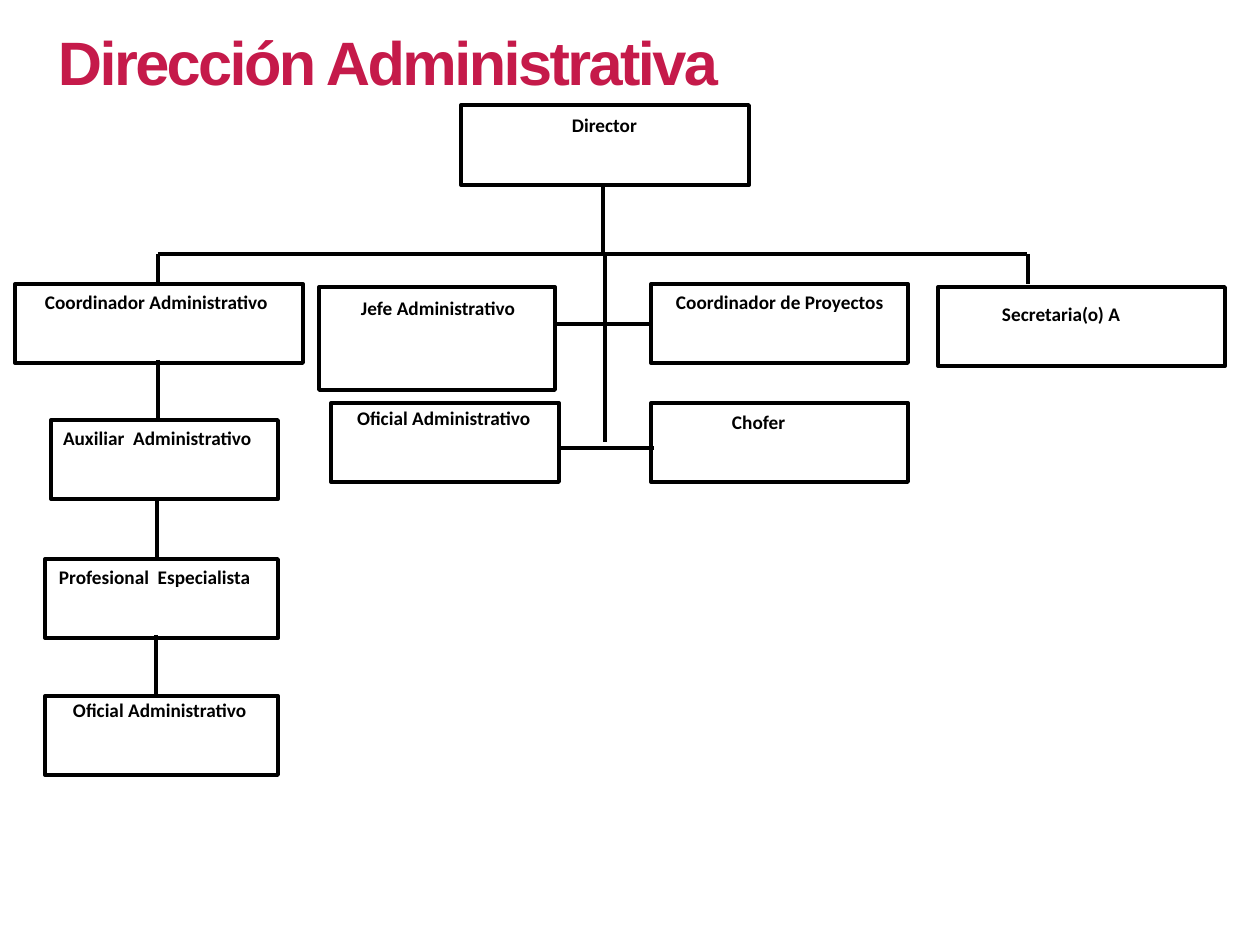
from pptx import Presentation
from pptx import util as u
from pptx.dml.color import RGBColor
from pptx.enum import shapes, text
from pptx.oxml.ns import qn
from lxml import etree

COLORS = {"title": "C51A4A", "ink": "000000"}
SCALE = 914400 / 126
LINE_WIDTH = u.Pt(2.25)

TITLE = ("Dirección Administrativa", (45, 18, 858, 87))
TITLE_FORMAT = {"name": "Arial", "size": u.Pt(35), "bold": True}
LABEL_FORMAT = {"name": "Calibri", "size": u.Pt(11), "bold": True}
INSET = 13

# Each post: name, box (left, top, width, height),
# label frame (left, top, width, height), left edge of the wording
POSTS = [
    ("Director", (461, 105, 288, 80), (478, 107, 175, 83), 572),
    ("Coordinador Administrativo", (15, 284, 288, 79), (33, 284, 251, 83), 45),
    ("Jefe Administrativo", (319, 287, 236, 103), (323, 290, 236, 83), 361),
    ("Coordinador de Proyectos", (651, 284, 257, 79), (664, 284, 234, 83), 676),
    ("Secretaria(o) A", (938, 287, 287, 79), (938, 296, 281, 59), 1002),
    ("Oficial Administrativo", (331, 403, 228, 79), (326, 400, 236, 83), 357),
    ("Chofer", (651, 403, 257, 79), (646, 404, 262, 83), 732),
    ("Auxiliar  Administrativo", (51, 420, 227, 79), (47, 420, 236, 83), 63),
    ("Profesional  Especialista", (45, 559, 233, 79), (21, 559, 305, 106), 59),
    ("Oficial Administrativo", (45, 696, 233, 79), (13, 692, 305, 83), 73),
]

# Each link: x1, y1, x2, y2
LINKS = [
    (603, 185, 603, 254),    # director to crossbar
    (158, 254, 1027, 254),   # crossbar
    (605, 254, 605, 442),    # central stem
    (158, 254, 158, 284),
    (1028, 254, 1028, 284),
    (650, 324, 556, 324),    # upper pair
    (654, 448, 559, 448),    # lower pair
    (158, 360, 158, 420),    # left-hand chain
    (157, 499, 157, 558),
    (156, 635, 156, 694),
]


def px(*values):
    return [u.Emu(round(value * SCALE)) for value in values]


def style_line(line):
    line.color.rgb = RGBColor.from_string(COLORS["ink"])
    line.width = LINE_WIDTH


def add_box(slide, frame):
    shape = slide.shapes.add_shape(shapes.MSO_SHAPE.RECTANGLE, *px(*frame))
    shape.shadow.inherit = False
    shape.fill.background()
    style_line(shape.line)


def add_link(slide, ends):
    link = slide.shapes.add_connector(shapes.MSO_CONNECTOR.STRAIGHT, *px(*ends))
    style_line(link.line)
    etree.SubElement(link._element.spPr, qn("a:effectLst"))


def add_text(slide, wording, frame, formats, color, text_left):
    text_frame = slide.shapes.add_textbox(*px(*frame)).text_frame
    settings = {"word_wrap": True, "margin_right": 0,
                "vertical_anchor": text.MSO_ANCHOR.TOP}
    for name, value in settings.items():
        setattr(text_frame, name, value)
    text_frame.margin_left = px(text_left - frame[0])[0]
    paragraph = text_frame.paragraphs[0]
    paragraph.alignment = text.PP_ALIGN.LEFT
    run = paragraph.add_run()
    run.text = wording
    for name, value in formats.items():
        setattr(run.font, name, value)
    run.font.color.rgb = RGBColor.from_string(COLORS[color])
    return run


def main():
    presentation = Presentation()
    presentation.slide_width, presentation.slide_height = px(1260, 945)
    slide = presentation.slides.add_slide(presentation.slide_layouts[6])

    # Boxes and links, then the wording above them
    for _, box, _, _ in POSTS:
        add_box(slide, box)
    for ends in LINKS:
        add_link(slide, ends)
    for name, _, frame, text_left in POSTS:
        add_text(slide, name, frame, LABEL_FORMAT, "ink", text_left)

    # Title with tightened letter spacing
    wording, frame = TITLE
    run = add_text(slide, wording, frame, TITLE_FORMAT, "title", frame[0] + INSET)
    run._r.get_or_add_rPr().set("spc", "-150")

    presentation.save("out.pptx")


if __name__ == "__main__":
    main()
